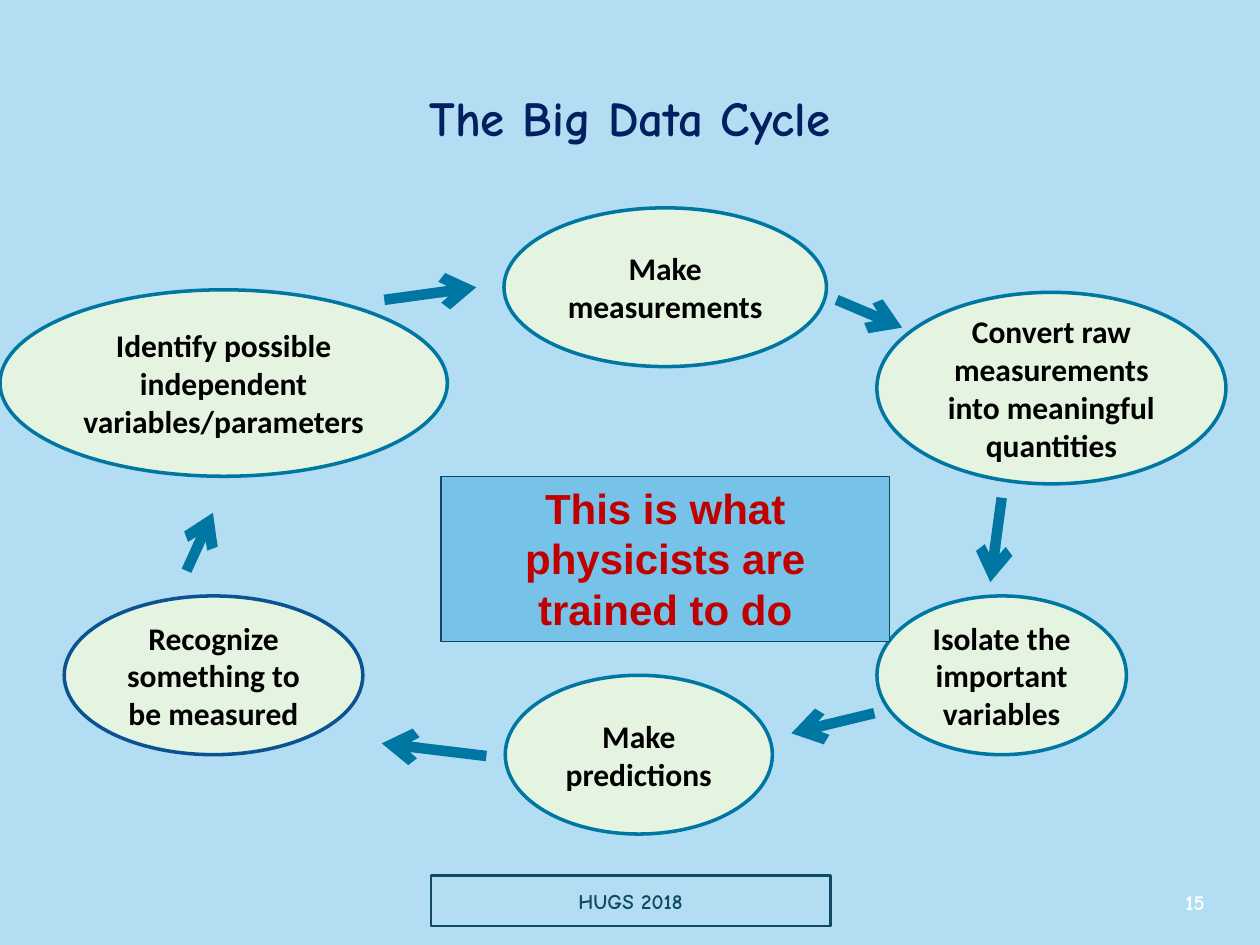
from lxml.etree import SubElement
from pptx import Presentation
from pptx.dml.color import RGBColor
from pptx.enum.shapes import MSO_CONNECTOR, MSO_SHAPE
from pptx.enum.text import MSO_ANCHOR, PP_ALIGN
from pptx.oxml.ns import qn
from pptx.util import Inches, Pt

NAVY, SLATE, TEAL = "002060", "114864", "0076A3"
STAGE_HEIGHT = 1.26

# Stage text, box, outline; in clockwise order
STAGES = [
    ("Identify possible independent variables/parameters", (0, 2.3, 3.55, 1.48), TEAL),
    ("Make measurements", (4, 1.65, 2.56, STAGE_HEIGHT), TEAL),
    ("Convert raw measurements into meaningful quantities", (6.96, 2.32, 2.77, 1.52), TEAL),
    ("Isolate the important variables", (6.96, 4.73, 1.98, STAGE_HEIGHT), TEAL),
    ("Make predictions", (4.01, 5.36, 2.12, STAGE_HEIGHT), TEAL),
    ("Recognize something to be measured", (0.51, 4.73, 2.37, STAGE_HEIGHT), "0B5292"),
]
# Start and end of the arrow that leaves each stage
STEPS = [
    ((3.05, 2.38), (3.78, 2.28)),
    ((6.64, 2.38), (7.16, 2.6)),
    ((7.95, 3.95), (7.86, 4.62)),
    ((6.94, 5.66), (6.28, 5.82)),
    ((3.86, 6), (3.03, 5.9)),
    ((1.48, 4.53), (1.69, 4.07)),
]


def color(hex_code):
    return RGBColor.from_string(hex_code)


def write(holder, text, *, size, font, ink, align=PP_ALIGN.CENTER, anchor=MSO_ANCHOR.MIDDLE):
    frame = holder.text_frame
    frame.word_wrap = True
    frame.vertical_anchor = anchor
    paragraph = frame.paragraphs[0]
    paragraph.alignment = align
    run = paragraph.add_run()
    run.text = text
    run.font.size = Pt(size)
    run.font.name = font
    run.font.bold = True
    run.font.color.rgb = color(ink)


def add_label(slide, box, text, **style):
    write(slide.shapes.add_textbox(*map(Inches, box)), text, **style)


def add_panel(slide, kind, box, text, *, outline, weight, fill=None, **style):
    panel = slide.shapes.add_shape(kind, *map(Inches, box))
    panel.shadow.inherit = False
    if fill:
        panel.fill.solid()
        panel.fill.fore_color.rgb = color(fill)
    else:
        panel.fill.background()
    panel.line.color.rgb = color(outline)
    panel.line.width = Pt(weight)
    write(panel, text, **style)


def add_step(slide, start, end):
    step = slide.shapes.add_connector(MSO_CONNECTOR.STRAIGHT, *map(Inches, start + end))
    step.line.color.rgb = color(TEAL)
    step.line.width = Pt(6)
    SubElement(step.line._get_or_add_ln(), qn("a:tailEnd"), type="arrow")
    SubElement(step._element.spPr, qn("a:effectLst"))


def add_cycle(slide):
    for text, box, outline in STAGES:
        add_panel(slide, MSO_SHAPE.OVAL, box, text, outline=outline, weight=2,
                  fill="E5F4E0", size=18, font="Calibri", ink="000000")
    for start, end in STEPS:
        add_step(slide, start, end)


def add_message(slide, box):
    add_panel(slide, MSO_SHAPE.RECTANGLE, box, "This is what physicists are trained to do",
              outline=SLATE, weight=0.75, fill="77C2E8", size=24, font="Arial",
              ink="C00000", anchor=MSO_ANCHOR.TOP)


def add_footer(slide, event_box, number_box):
    add_label(slide, number_box, "15", size=12, font="Comic Neue", ink="FFFFFF",
              align=PP_ALIGN.RIGHT)
    add_panel(slide, MSO_SHAPE.RECTANGLE, event_box, "HUGS 2018", outline=SLATE,
              weight=1.5, size=12, font="Comic Neue", ink=SLATE)


def main():
    deck = Presentation()
    deck.slide_width, deck.slide_height = Inches(10), Inches(7.5)
    slide = deck.slides.add_slide(deck.slide_layouts[6])
    slide.background.fill.solid()
    slide.background.fill.fore_color.rgb = color("B3DDF2")

    add_label(slide, (0.5, 0.3, 9, 1.25), "The Big Data Cycle", size=28,
              font="Comic Neue", ink=NAVY)
    add_footer(slide, (3.42, 6.95, 3.17, 0.4), (9.08, 6.96, 0.58, 0.4))
    add_cycle(slide)
    add_message(slide, (3.5, 3.78, 3.56, 1.31))
    deck.save("out.pptx")


if __name__ == "__main__":
    main()
